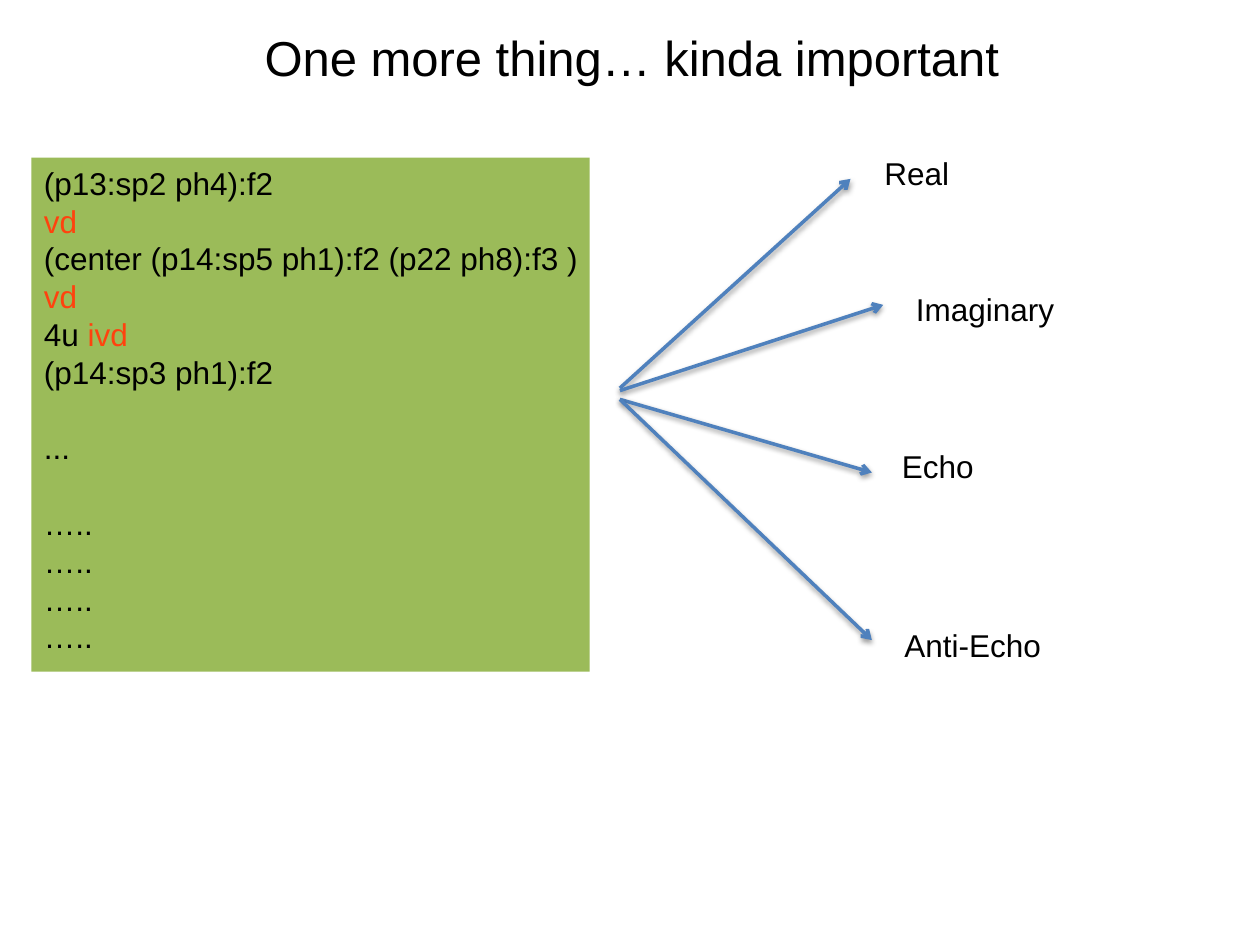
from pptx import Presentation
from pptx.dml.color import RGBColor
from pptx.enum.shapes import MSO_CONNECTOR, MSO_SHAPE
from pptx.enum.text import MSO_ANCHOR, MSO_AUTO_SIZE, PP_ALIGN
from pptx.oxml import parse_xml
from pptx.oxml.ns import nsdecls, qn
from pptx.util import Pt

PX = 9144
FONT = "Arial"
COLORS = {
    "text": "000000",
    "delay": "FF420E",
    "panel": "9BBB59",
    "arrow": "4F81BD",
    "shadow": "000000",
}
PULSE_CODE = [
    [("(p13:sp2 ph4):f2", "text")],
    [("vd", "delay")],
    [("(center (p14:sp5 ph1):f2 (p22 ph8):f3 )", "text")],
    [("vd", "delay")],
    [("4u ", "text"), ("ivd", "delay")],
    [("(p14:sp3 ph1):f2", "text")],
    [("...", "text")],
] + [[("…..", "text")]] * 4
LINES_AFTER_GAP = (6, 7)
LINE_PITCH = Pt(21.6)
SIGNALS = [
    ("Real", (200, 0, 72, 40), (0, 191), (183, 25)),
    ("Imaginary", (225, 108, 131, 40), (0, 193), (209, 125)),
    ("Echo", (214, 233, 78, 40), (0, 200), (200, 258)),
    ("Anti-Echo", (216, 375, 131, 40), (0, 200), (200, 391)),
]


def px(*lengths):
    return [length * PX for length in lengths]


def color(name):
    return RGBColor.from_string(COLORS[name])


def style(paragraph, size):
    paragraph.alignment = PP_ALIGN.LEFT
    paragraph.font.name = FONT
    paragraph.font.size = Pt(size)
    paragraph.font.color.rgb = color("text")


def fill_line(frame, text, size):
    frame.word_wrap = False
    frame.auto_size = MSO_AUTO_SIZE.NONE
    frame.vertical_anchor = MSO_ANCHOR.TOP
    frame.text = text
    style(frame.paragraphs[0], size)


def place_title(slide, box, text):
    title = slide.shapes.title
    title.left, title.top, title.width, title.height = px(*box)
    fill_line(title.text_frame, text, 28)


def place_code(slide, box, lines):
    panel = slide.shapes.add_shape(MSO_SHAPE.RECTANGLE, *px(*box))
    panel.shadow.inherit = False
    panel.fill.solid()
    panel.fill.fore_color.rgb = color("panel")
    panel.line.fill.background()
    frame = panel.text_frame
    frame.word_wrap = False
    frame.vertical_anchor = MSO_ANCHOR.TOP
    for index, parts in enumerate(lines):
        line = frame.paragraphs[0] if index == 0 else frame.add_paragraph()
        style(line, 18)
        line.line_spacing = LINE_PITCH
        if index in LINES_AFTER_GAP:
            line.space_before = LINE_PITCH
        for text, tone in parts:
            part = line.add_run()
            part.text = text
            if tone != "text":
                part.font.color.rgb = color(tone)


def add_arrow(slide, start, end):
    arrow = slide.shapes.add_connector(MSO_CONNECTOR.STRAIGHT, *px(*start, *end))
    arrow.line.width = Pt(2)
    arrow.line.color.rgb = color("arrow")
    properties = arrow._element.spPr
    properties.find(qn("a:ln")).append(
        parse_xml(f'<a:tailEnd {nsdecls("a")} type="arrow"/>')
    )
    properties.append(parse_xml(
        f'<a:effectLst {nsdecls("a")}>'
        '<a:outerShdw blurRad="40000" dist="20000" dir="5400000" rotWithShape="0">'
        f'<a:srgbClr val="{COLORS["shadow"]}"><a:alpha val="38000"/></a:srgbClr>'
        '</a:outerShdw></a:effectLst>'
    ))


def place_signals(slide, box, signals):
    left, top = box[:2]
    for _, _, start, end in signals:
        add_arrow(slide, (left + start[0], top + start[1]), (left + end[0], top + end[1]))
    for name, (x, y, width, height), _, _ in signals:
        label = slide.shapes.add_textbox(*px(left + x, top + y, width, height))
        fill_line(label.text_frame, name, 18)


def main():
    deck = Presentation()
    deck.slide_width, deck.slide_height = px(1000, 750)
    slide = deck.slides.add_slide(deck.slide_layouts[5])
    place_code(slide, (25, 125, 443, 408), PULSE_CODE)
    place_title(slide, (200, 17, 610, 57), "One more thing… kinda important")
    place_signals(slide, (492, 117, 356, 415), SIGNALS)
    deck.save("out.pptx")


if __name__ == "__main__":
    main()
